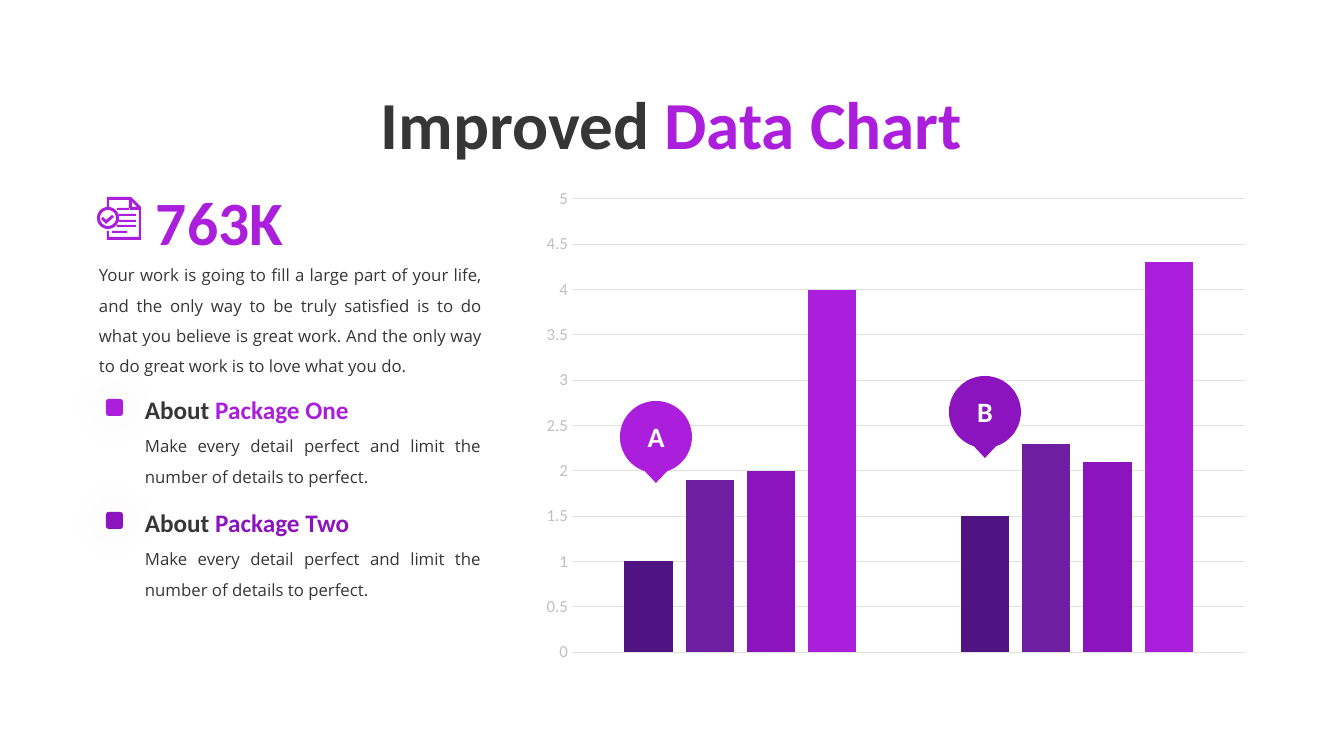
import math

import pptx
import pptx.chart.data
import pptx.dml.color
import pptx.enum.chart
import pptx.enum.shapes
import pptx.enum.text
import pptx.oxml
import pptx.oxml.ns
import pptx.util

RGBColor = pptx.dml.color.RGBColor
ALIGN = pptx.enum.text.PP_ALIGN

DARK = RGBColor(0x36, 0x36, 0x36)
WHITE = RGBColor(0xFF, 0xFF, 0xFF)
AXIS_GREY = RGBColor(0xBF, 0xBF, 0xBF)
GRID_GREY = RGBColor(0xE1, 0xE1, 0xE1)
INDIGO = RGBColor(0x50, 0x14, 0x82)
PLUM = RGBColor(0x6E, 0x1E, 0xA0)
PURPLE = RGBColor(0x8C, 0x14, 0xBE)
VIOLET = RGBColor(0xAA, 0x1E, 0xDC)

HEADING_FONT, BODY_FONT = "Calibri", "Open Sans"
PX_PER_INCH = 100.8

SERIES = [
    ("Series 1", (1, 1.5), INDIGO),
    ("Series 2", (1.9, 2.3), PLUM),
    ("Series 3", (2, 2.1), PURPLE),
    ("Series 4", (4, 4.3), VIOLET),
]
INTRO = ("Your work is going to fill a large part of your life, and the only way "
         "to be truly satisfied is to do what you believe is great work. And the "
         "only way to do great work is to love what you do.")
PACKAGE_TEXT = "Make every detail perfect and limit the number of details to perfect."


def px(length):
    return pptx.util.Emu(round(length * 914400 / PX_PER_INCH))


def place(shape, left, top, width, height):
    shape.left, shape.top = px(left), px(top)
    shape.width, shape.height = px(width), px(height)


def write_heading(shape, parts, size, align=ALIGN.LEFT):
    """Write one bold paragraph from (text, colour) parts."""
    paragraph = shape.text_frame.paragraphs[0]
    paragraph.alignment = align
    paragraph.font.name = HEADING_FONT
    paragraph.font.size = pptx.util.Pt(size)
    paragraph.font.bold = True
    for text, color in parts:
        run = paragraph.add_run()
        run.text = text
        run.font.color.rgb = color


def add_text_box(slide, *box):
    shape = slide.shapes.add_textbox(*map(px, box))
    shape.text_frame.word_wrap = True
    shape.text_frame.auto_size = pptx.enum.text.MSO_AUTO_SIZE.SHAPE_TO_FIT_TEXT
    return shape


def add_body_text(slide, text, *box):
    paragraph = add_text_box(slide, *box).text_frame.paragraphs[0]
    paragraph.text = text
    paragraph.alignment = ALIGN.JUSTIFY
    paragraph.line_spacing = 1.5
    paragraph.font.name = BODY_FONT
    paragraph.font.size = pptx.util.Pt(12)
    paragraph.font.color.rgb = DARK


def fill_plain(shape, color):
    shape.shadow.inherit = False
    shape.fill.solid()
    shape.fill.fore_color.rgb = color
    shape.line.fill.background()


def add_outline(slide, contours, color):
    """Draw closed contours as one shape; inner contours become holes."""
    contours = [[(px(x), px(y)) for x, y in contour] for contour in contours]
    builder = slide.shapes.build_freeform(*contours[0][0])
    builder.add_line_segments(contours[0][1:])
    for contour in contours[1:]:
        builder.move_to(*contour[0])
        builder.add_line_segments(contour[1:])
    fill_plain(builder.convert_to_shape(), color)


def arc(center_x, center_y, radius, start=0, end=360, step=6):
    return [(center_x + radius * math.cos(math.radians(angle)),
             center_y + radius * math.sin(math.radians(angle)))
            for angle in range(start, end + 1, step)]


def bar(left, top, right, thickness=2):
    bottom = top + thickness
    return [(left, top), (right, top), (right, bottom), (left, bottom)]


def add_pin(slide, letter, center_x, center_y, color):
    contour = arc(center_x, center_y, 36, 108, 432) + [(center_x, center_y + 46)]
    add_outline(slide, [contour], color)
    label = add_text_box(slide, center_x - 27, center_y - 22, 54, 44)
    write_heading(label, [(letter, WHITE)], 20, ALIGN.CENTER)


def add_report_icon(slide):
    page = [(107, 207), (107, 197), (131, 197), (141, 207), (141, 240),
            (107, 240), (107, 231), (109, 231), (109, 237), (139, 237),
            (139, 210), (129, 210), (129, 200), (109, 200), (109, 207)]
    fold = [(132, 202), (132, 207), (137, 207)]
    check = [(114, 217), (106, 224), (101, 219), (103, 217), (106, 220), (112, 215)]
    text_lines = [bar(117, 208, 130), bar(119, 214, 136), bar(119, 220, 136),
                  bar(117, 225, 136), bar(112, 231, 127)]
    rings = [arc(108, 218, radius) for radius in (11, 8)]
    add_outline(slide, [page, fold, check, *rings, *text_lines], VIOLET)


def add_package(slide, name, top, color):
    heading = add_text_box(slide, 135, top, 331, 40)
    write_heading(heading, [("About ", DARK), (name, color)], 18)
    add_body_text(slide, PACKAGE_TEXT, 135, top + 32, 356, 68)
    marker = slide.shapes.add_shape(
        pptx.enum.shapes.MSO_SHAPE.ROUNDED_RECTANGLE,
        px(106), px(top + 10), px(17), px(17))
    fill_plain(marker, color)
    effects = marker._element.spPr.find(pptx.oxml.ns.qn("a:effectLst"))
    effects.append(pptx.oxml.parse_xml(
        f'<a:outerShdw {pptx.oxml.ns.nsdecls("a")} blurRad="381000" dist="0" '
        'algn="ctr" rotWithShape="0"><a:srgbClr val="000000">'
        '<a:alpha val="10000"/></a:srgbClr></a:outerShdw>'))


def add_column_chart(slide, *box):
    data = pptx.chart.data.CategoryChartData()
    data.categories = ["1", "2"]
    for name, values, _ in SERIES:
        data.add_series(name, values)
    chart = slide.shapes.add_chart(
        pptx.enum.chart.XL_CHART_TYPE.COLUMN_CLUSTERED, *map(px, box), data).chart
    chart.has_legend = chart.has_title = False
    chart.font.name = BODY_FONT
    chart.font.size = pptx.util.Pt(10)
    chart.font.color.rgb = DARK
    plot = chart.plots[0]
    plot.gap_width, plot.overlap, plot.vary_by_categories = 219, -27, False
    for series, (_, _, color) in zip(plot.series, SERIES):
        series.format.fill.solid()
        series.format.fill.fore_color.rgb = color
    chart.category_axis.visible = False
    axis = chart.value_axis
    axis.minimum_scale, axis.maximum_scale, axis.major_unit = 0, 5, 0.5
    axis.major_tick_mark = pptx.enum.chart.XL_TICK_MARK.NONE
    axis.format.line.fill.background()
    axis.major_gridlines.format.line.color.rgb = GRID_GREY
    axis.major_gridlines.format.line.width = pptx.util.Pt(0.75)
    labels = axis.tick_labels
    labels.font.name = HEADING_FONT
    labels.font.size = pptx.util.Pt(12)
    labels.font.color.rgb = AXIS_GREY
    labels.number_format, labels.number_format_is_linked = "General", False


def main():
    presentation = pptx.Presentation()
    presentation.slide_width, presentation.slide_height = px(1344), px(756)
    slide = presentation.slides.add_slide(
        presentation.slide_layouts.get_by_name("Title Only"))

    title = slide.shapes.title
    place(title, 178, 77, 987, 92)
    title.text_frame.vertical_anchor = pptx.enum.text.MSO_ANCHOR.TOP
    write_heading(title, [("Improved ", DARK), ("Data Chart", VIOLET)], 48, ALIGN.CENTER)

    add_column_chart(slide, 532, 179, 728, 493)
    add_pin(slide, "A", 656, 437, VIOLET)
    add_pin(slide, "B", 985, 412, PURPLE)

    add_report_icon(slide)
    write_heading(add_text_box(slide, 146, 179, 177, 85), [("763K", VIOLET)], 44)
    add_body_text(slide, INTRO, 89, 250, 403, 128)
    add_package(slide, "Package One", 389, VIOLET)
    add_package(slide, "Package Two", 502, PURPLE)

    presentation.save("out.pptx")


if __name__ == "__main__":
    main()
